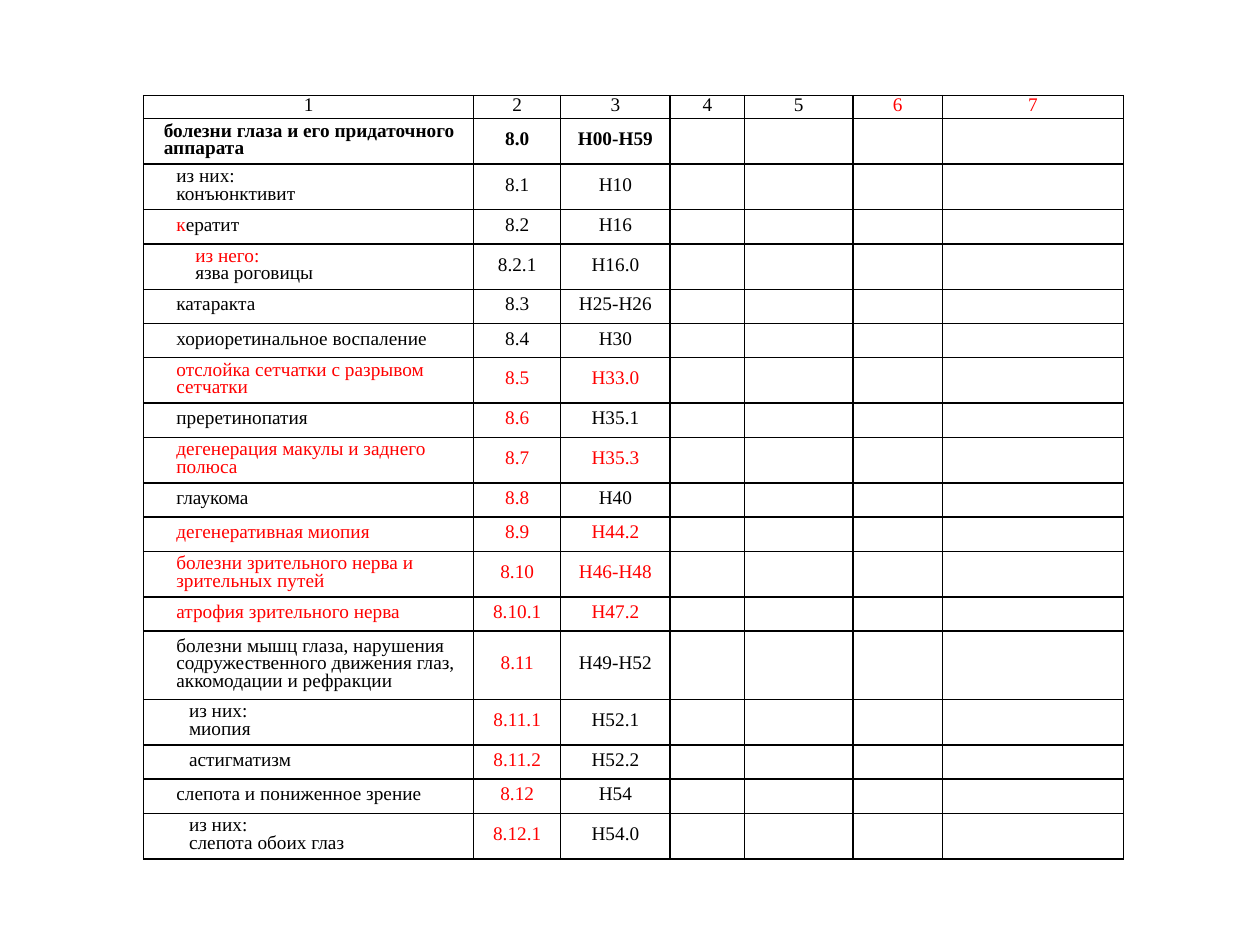
from dataclasses import dataclass

from lxml.etree import SubElement
from pptx import Presentation
from pptx.dml.color import RGBColor
from pptx.enum.text import MSO_ANCHOR as Anchor, PP_ALIGN as Align
from pptx.oxml.ns import qn
from pptx.util import Inches, Pt

BLACK = RGBColor(0x00, 0x00, 0x00)
RED = RGBColor(0xFF, 0x00, 0x00)

COLUMN_WIDTHS = [2.62, 0.69, 0.87, 0.59, 0.86, 0.71, 1.44]
TABLE_HEIGHT = 6.06
HEADER_UNITS = 1
FIRST_RED_HEADER = 6
FIRST_RED_NUMBER = "8.5"
GROUP, DISEASE, SUBTYPE, DETAIL = 0.09, 0.19, 0.29, 0.34


@dataclass
class Entry:
    number: str
    code: str
    lines: list
    units: float = 1.5
    indent: float = DISEASE
    red: bool = False
    accent: str = ""
    bold: bool = False


ENTRIES = [
    Entry("8.0", "H00-H59", ["болезни глаза и его придаточного аппарата"], 2, GROUP, bold=True),
    Entry("8.1", "Н10", ["из них:", "конъюнктивит"], 2),
    Entry("8.2", "Н16", ["кератит"], accent="к"),
    Entry("8.2.1", "Н16.0", ["из него:", "язва роговицы"], 2, DETAIL, accent="из него:"),
    Entry("8.3", "H25-H26", ["катаракта"]),
    Entry("8.4", "Н30", ["хориоретинальное воспаление"]),
    Entry("8.5", "Н33.0", ["отслойка сетчатки с разрывом сетчатки"], 2, red=True),
    Entry("8.6", "Н35.1", ["преретинопатия"]),
    Entry("8.7", "Н35.3", ["дегенерация макулы и заднего полюса"], 2, red=True),
    Entry("8.8", "Н40", ["глаукома"]),
    Entry("8.9", "Н44.2", ["дегенеративная миопия"], red=True),
    Entry("8.10", "Н46-Н48", ["болезни зрительного нерва и зрительных путей"], 2, red=True),
    Entry("8.10.1", "Н47.2", ["атрофия зрительного нерва"], red=True),
    Entry("8.11", "H49-H52", ["болезни мышц глаза, нарушения содружественного движения глаз, "
                              "аккомодации и рефракции"], 3),
    Entry("8.11.1", "H52.1", ["из них:", "миопия"], 2, SUBTYPE),
    Entry("8.11.2", "H52.2", ["астигматизм"], indent=SUBTYPE),
    Entry("8.12", "Н54", ["слепота и пониженное зрение"]),
    Entry("8.12.1", "Н54.0", ["из них:", "слепота обоих глаз"], 2, SUBTYPE),
]


class SlideBuilder:
    font_name = "Times New Roman"
    font_size = Pt(11)
    line_spacing = Pt(10)
    border_width = Pt(1)

    def __init__(self, slide):
        self.slide = slide

    def table(self, left, top, widths, heights):
        shape = self.slide.shapes.add_table(
            len(heights), len(widths), Inches(left), Inches(top),
            Inches(sum(widths)), Inches(sum(heights)))
        table = shape.table
        table.first_row = False
        table.horz_banding = False
        for column, width in zip(table.columns, widths):
            column.width = Inches(width)
        for row, height in zip(table.rows, heights):
            row.height = Inches(height)
        for cell in table.iter_cells():
            self.format_cell(cell)
        return table

    def format_cell(self, cell):
        cell.margin_left = cell.margin_right = Inches(0.07)
        cell.margin_top = cell.margin_bottom = 0
        cell.vertical_anchor = Anchor.MIDDLE
        properties = cell._tc.get_or_add_tcPr()
        for side in ("a:lnL", "a:lnR", "a:lnT", "a:lnB"):
            line = SubElement(properties, qn(side), w=str(self.border_width))
            fill = SubElement(line, qn("a:solidFill"))
            SubElement(fill, qn("a:srgbClr"), val=str(BLACK))
        cell.fill.background()
        self.format_paragraph(cell.text_frame.paragraphs[0])

    def format_paragraph(self, paragraph, color=BLACK, bold=False):
        paragraph.line_spacing = self.line_spacing
        paragraph.font.name = self.font_name
        paragraph.font.size = self.font_size
        paragraph.font.color.rgb = color
        paragraph.font.bold = bold

    def centered(self, cell, text, color=BLACK, bold=False):
        cell.text = text
        paragraph = cell.text_frame.paragraphs[0]
        paragraph.alignment = Align.CENTER
        self.format_paragraph(paragraph, color, bold)

    def label(self, cell, entry):
        cell.text = "\n".join(entry.lines)
        for paragraph in cell.text_frame.paragraphs:
            self.format_paragraph(paragraph, RED if entry.red else BLACK, entry.bold)
            paragraph._p.get_or_add_pPr().set("marL", str(Inches(entry.indent)))
        if entry.accent:
            paragraph = cell.text_frame.paragraphs[0]
            run = paragraph.runs[0]
            rest = run.text.removeprefix(entry.accent)
            run.text = entry.accent
            run.font.color.rgb = RED
            if rest:
                paragraph.add_run().text = rest


def main():
    presentation = Presentation()
    presentation.slide_width = Inches(10)
    presentation.slide_height = Inches(7.5)
    builder = SlideBuilder(presentation.slides.add_slide(presentation.slide_layouts[6]))

    units = [HEADER_UNITS] + [entry.units for entry in ENTRIES]
    heights = [TABLE_HEIGHT * unit / sum(units) for unit in units]
    table = builder.table(1.14, 0.76, COLUMN_WIDTHS, heights)

    for number in range(1, len(COLUMN_WIDTHS) + 1):
        color = RED if number >= FIRST_RED_HEADER else BLACK
        builder.centered(table.cell(0, number - 1), str(number), color)

    number_color = BLACK
    for row, entry in enumerate(ENTRIES, start=1):
        if entry.number == FIRST_RED_NUMBER:
            number_color = RED
        builder.label(table.cell(row, 0), entry)
        builder.centered(table.cell(row, 1), entry.number, number_color, entry.bold)
        builder.centered(table.cell(row, 2), entry.code, RED if entry.red else BLACK, entry.bold)

    presentation.save("out.pptx")


if __name__ == "__main__":
    main()
